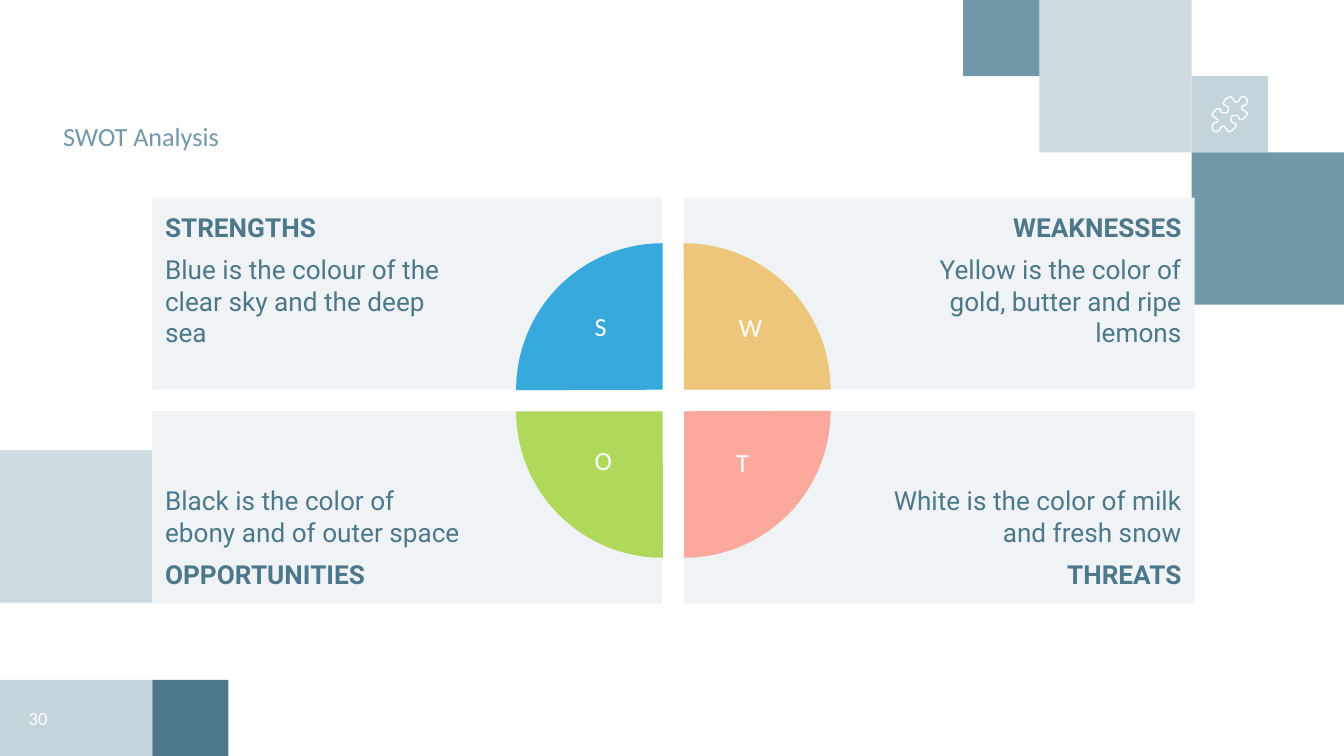
"""Build a SWOT slide with four panels around a split pie."""
from dataclasses import dataclass
from typing import Any, Optional

from lxml.etree import SubElement
from pptx import Presentation
from pptx.dml.color import RGBColor
from pptx.enum.shapes import MSO_SHAPE as Form
from pptx.enum.text import MSO_ANCHOR as Anchor, PP_ALIGN as Align
from pptx.oxml.ns import qn
from pptx.util import Inches, Pt

WHITE = RGBColor(0xFF, 0xFF, 0xFF)
STEEL = RGBColor(0x71, 0x98, 0xA9)
MIST = RGBColor(0xCE, 0xDB, 0xE0)
DEEP = RGBColor(0x4D, 0x77, 0x8A)
PALE = RGBColor(0xEF, 0xF3, 0xF5)
BLUE = RGBColor(0x37, 0xA9, 0xDD)
GOLD = RGBColor(0xED, 0xC6, 0x7B)
PINK = RGBColor(0xFA, 0xA9, 0x9C)
LIME = RGBColor(0xB0, 0xD8, 0x5B)

PAGE_W = 10
PAGE_H = PAGE_W * 9 / 16
SMALL = 17 / 30
LARGE = 2 * SMALL
FOOT = PAGE_H - SMALL
WIDE, HIGH = 3.8, 1.43
COLS, ROWS = (1.13, 5.09), (1.47, 3.06)
ROUND = 2.18
PIE_X, PIE_Y = (3.84, 4.0), (1.81, 1.97)
MARGIN, CLEAR = 0.1, 1.5

CURVE = (
    (25, 79), (27, 78), (28, 76), (28, 74), (26, 72), (24, 72), (22, 74),
    (22, 75), (20, 76), (19, 76), (16, 72), (15, 72), (13, 73), (11, 75),
    (10, 77), (11, 78), (13, 79), (14, 80), (14, 82), (13, 84), (11, 84),
    (9, 84), (8, 82), (8, 81), (6, 81), (4, 82), (2, 85), (2, 86),
    (6, 89), (6, 91),
)


@dataclass(frozen=True)
class Box:
    left: float
    top: float
    width: float
    height: float

    def place(self) -> list:
        return [Inches(n) for n in (self.left, self.top, self.width, self.height)]


@dataclass(frozen=True)
class Block:
    box: Box
    tint: RGBColor
    alpha: Optional[int] = None


@dataclass(frozen=True)
class Panel:
    col: int
    row: int
    head: str
    body: str


@dataclass(frozen=True)
class Slice:
    col: int
    row: int
    turn: int
    tint: RGBColor


@dataclass(frozen=True)
class Label:
    box: Box
    text: str
    tint: RGBColor = WHITE
    size: int = 14
    align: Align = Align.CENTER
    anchor: Anchor = Anchor.TOP
    inset: tuple = (0.1, 0.05, 0.1, 0.05)


BLOCKS = (
    Block(Box(PAGE_W - LARGE, LARGE, LARGE, LARGE), STEEL),
    Block(Box(PAGE_W - LARGE, SMALL, SMALL, SMALL), STEEL, 41),
    Block(Box(PAGE_W - 2 * LARGE, 0, LARGE, LARGE), MIST),
    Block(Box(PAGE_W - 2 * LARGE - SMALL, 0, SMALL, SMALL), STEEL),
    Block(Box(0, 3.35, LARGE, LARGE), MIST),
    Block(Box(LARGE, FOOT, SMALL, SMALL), DEEP),
    Block(Box(0, FOOT, LARGE, SMALL), STEEL, 41),
)
PANELS = (
    Panel(0, 0, "STRENGTHS", "Blue is the colour of the clear sky and the deep sea"),
    Panel(1, 0, "WEAKNESSES", "Yellow is the color of gold, butter and ripe lemons"),
    Panel(0, 1, "OPPORTUNITIES", "Black is the color of ebony and of outer space"),
    Panel(1, 1, "THREATS", "White is the color of milk and fresh snow"),
)
SLICES = (
    Slice(0, 0, 0, BLUE),
    Slice(1, 0, 90, GOLD),
    Slice(1, 1, 180, PINK),
    Slice(0, 1, 270, LIME),
)
LABELS = (
    Label(Box(0.47, 0.72, 4.5, 0.41), "SWOT Analysis", STEEL, 14,
          Align.LEFT, Anchor.BOTTOM, (0, 0, 0, 0)),
    Label(Box(0, FOOT, SMALL, SMALL), "30", WHITE, 10,
          Align.CENTER, Anchor.MIDDLE, (0.1, 0.1, 0.1, 0.1)),
    Label(Box(4.32, 2.26, 0.3, 0.43), "S"),
    Label(Box(5.24, 2.27, 0.69, 0.41), "W"),
    Label(Box(4.29, 3.26, 0.4, 0.43), "O"),
    Label(Box(5.34, 3.27, 0.37, 0.41), "T"),
)


def apply(item: Any, look: dict) -> None:
    for name, value in look.items():
        setattr(item, name, value)


def set_frame(frame: Any, inset: tuple, anchor: Anchor, wrap: bool = True) -> None:
    sides = ("margin_left", "margin_top", "margin_right", "margin_bottom")
    apply(frame, dict(zip(sides, map(Inches, inset))))
    apply(frame, {"word_wrap": wrap, "vertical_anchor": anchor})


def write(para: Any, text: str, tint: RGBColor, look: dict, font: dict) -> None:
    apply(para, look)
    run = para.add_run()
    run.text = text
    apply(run.font, font)
    run.font.color.rgb = tint


def add_form(slide: Any, form: Form, box: Box, tint: RGBColor) -> Any:
    shape = slide.shapes.add_shape(form, *box.place())
    shape.shadow.inherit = False
    shape.fill.solid()
    shape.fill.fore_color.rgb = tint
    shape.line.fill.background()
    return shape


def add_block(slide: Any, block: Block) -> None:
    shape = add_form(slide, Form.RECTANGLE, block.box, block.tint)
    if block.alpha is not None:
        paint = shape._element.spPr.find(".//" + qn("a:srgbClr"))
        SubElement(paint, qn("a:alpha")).set("val", str(block.alpha * 1000))


def add_piece(slide: Any) -> None:
    turned = [(30 - x, 170 - y) for x, y in CURVE]
    points = [(900 + x, y) for x, y in (*CURVE, *turned)]
    pen = slide.shapes.build_freeform(*points[0], scale=Inches(0.01))
    pen.add_line_segments(points[1:], close=True)
    shape = pen.convert_to_shape()
    shape.shadow.inherit = False
    shape.fill.background()
    shape.line.color.rgb = WHITE
    shape.line.width = Pt(0.75)


def add_panel(slide: Any, panel: Panel) -> None:
    box = Box(COLS[panel.col], ROWS[panel.row], WIDE, HIGH)
    frame = add_form(slide, Form.RECTANGLE, box, PALE).text_frame
    left, right = (CLEAR, MARGIN) if panel.col else (MARGIN, CLEAR)
    set_frame(frame, (left, MARGIN, right, MARGIN), Anchor.BOTTOM if panel.row else Anchor.TOP)
    align = Align.RIGHT if panel.col else Align.LEFT
    lines = [(panel.head, True), (panel.body, False)]
    if panel.row:
        lines.reverse()
    for rank, (text, bold) in enumerate(lines):
        para = frame.add_paragraph() if rank else frame.paragraphs[0]
        gap = {"space_before": Pt(6), "space_after": Pt(6)} if rank else {}
        font = {"name": "Roboto", "size": Pt(14), "bold": bold}
        write(para, text, DEEP, {"alignment": align, **gap}, font)


def add_slice(slide: Any, part: Slice) -> None:
    box = Box(PIE_X[part.col], PIE_Y[part.row], ROUND, ROUND)
    shape = add_form(slide, Form.PIE, box, part.tint)
    shape.adjustments[0], shape.adjustments[1] = 107.89, 162
    shape.rotation = part.turn


def add_label(slide: Any, label: Label) -> None:
    frame = slide.shapes.add_textbox(*label.box.place()).text_frame
    set_frame(frame, label.inset, label.anchor, len(label.text) > 1)
    font = {"name": "Calibri", "size": Pt(label.size)}
    write(frame.paragraphs[0], label.text, label.tint, {"alignment": label.align}, font)


def main() -> None:
    deck = Presentation()
    apply(deck, {"slide_width": Inches(PAGE_W), "slide_height": Inches(PAGE_H)})
    slide = deck.slides.add_slide(deck.slide_layouts[6])
    for block in BLOCKS:
        add_block(slide, block)
    add_piece(slide)
    for draw, items in ((add_panel, PANELS), (add_slice, SLICES), (add_label, LABELS)):
        for item in items:
            draw(slide, item)
    deck.save("out.pptx")


if __name__ == "__main__":
    main()
